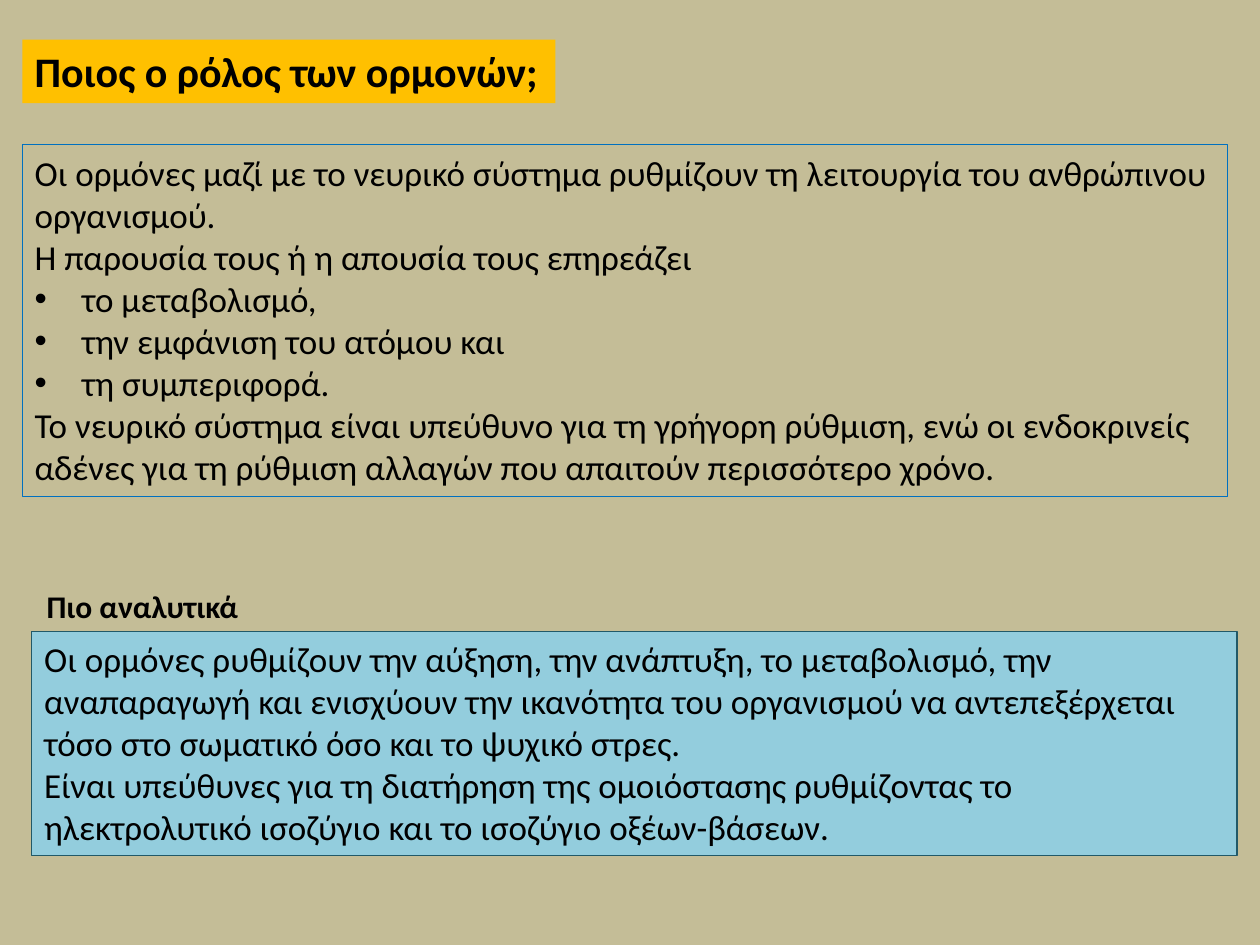
from lxml.etree import SubElement
from pptx import Presentation
from pptx.dml.color import RGBColor
from pptx.enum.shapes import MSO_SHAPE
from pptx.enum.text import MSO_ANCHOR, MSO_AUTO_SIZE, PP_ALIGN
from pptx.oxml.ns import qn
from pptx.util import Cm, Pt

BLACK = RGBColor(0x00, 0x00, 0x00)
SAND = RGBColor(0xC4, 0xBD, 0x97)
GOLD = RGBColor(0xFF, 0xC0, 0x00)
SKY = RGBColor(0x93, 0xCD, 0xDD)
BLUE = RGBColor(0x00, 0x70, 0xC0)
TEAL = RGBColor(0x21, 0x59, 0x68)

BULLET = "•"
ROLE = [
    "Οι ορμόνες μαζί με το νευρικό σύστημα ρυθμίζουν τη λειτουργία του ανθρώπινου οργανισμού.",
    "Η παρουσία τους ή η απουσία τους επηρεάζει",
    BULLET + "το μεταβολισμό,",
    BULLET + "την εμφάνιση του ατόμου και",
    BULLET + "τη συμπεριφορά.",
    "Το νευρικό σύστημα είναι υπεύθυνο για τη γρήγορη ρύθμιση, ενώ οι ενδοκρινείς "
    "αδένες για τη ρύθμιση αλλαγών που απαιτούν περισσότερο χρόνο.",
]
DETAILS = [
    "Οι ορμόνες ρυθμίζουν την αύξηση, την ανάπτυξη, το μεταβολισμό, την αναπαραγωγή "
    "και ενισχύουν την ικανότητα του οργανισμού να αντεπεξέρχεται τόσο στο σωματικό "
    "όσο και το ψυχικό στρες.",
    "Είναι υπεύθυνες για τη διατήρηση της ομοιόστασης ρυθμίζοντας το",
    "ηλεκτρολυτικό ισοζύγιο και το ισοζύγιο οξέων-βάσεων.",
]


def add_bullet(p, indent=Cm(0.95)):
    pPr = p._p.get_or_add_pPr()
    pPr.set("marL", str(indent))
    pPr.set("indent", str(-indent))
    SubElement(pPr, qn("a:buFont"), typeface="Arial")
    SubElement(pPr, qn("a:buChar"), char=BULLET)


def write(tf, lines, size=20, bold=False, wrap=True, font="Calibri", color=BLACK):
    """Fill a text frame; lines that start with the bullet sign become list items."""
    tf.word_wrap = wrap
    tf.auto_size = MSO_AUTO_SIZE.SHAPE_TO_FIT_TEXT
    tf.vertical_anchor = MSO_ANCHOR.TOP
    for i, line in enumerate(lines):
        p = tf.add_paragraph() if i else tf.paragraphs[0]
        p.alignment = PP_ALIGN.LEFT
        if line.startswith(BULLET):
            add_bullet(p)
        r = p.add_run()
        r.text = line.removeprefix(BULLET)
        r.font.name = font
        r.font.size = Pt(size)
        r.font.bold = bold
        r.font.color.rgb = color


class SlideBuilder:
    def __init__(self, prs, background):
        self.s = prs.slides.add_slide(prs.slide_layouts[6])
        self.s.background.fill.solid()
        self.s.background.fill.fore_color.rgb = background

    def panel(self, x, y, w, h, lines, fill=None, line=None, **fmt):
        sp = self.s.shapes.add_shape(MSO_SHAPE.RECTANGLE, Cm(x), Cm(y), Cm(w), Cm(h))
        sp.shadow.inherit = False
        if fill is None:
            sp.fill.background()
        else:
            sp.fill.solid()
            sp.fill.fore_color.rgb = fill
        if line is None:
            sp.line.fill.background()
        else:
            sp.line.color.rgb = line
            sp.line.width = Pt(0.75)
        write(sp.text_frame, lines, **fmt)

    def label(self, x, y, w, h, text, **fmt):
        sp = self.s.shapes.add_textbox(Cm(x), Cm(y), Cm(w), Cm(h))
        write(sp.text_frame, [text], **fmt)


def main():
    prs = Presentation()
    prs.slide_width, prs.slide_height = Cm(25.4), Cm(19.05)
    b = SlideBuilder(prs, SAND)
    b.panel(0.45, 2.92, 24.3, 7.09, ROLE, line=BLUE)
    b.panel(0.64, 12.73, 24.3, 4.52, DETAILS, fill=SKY, line=TEAL)
    b.panel(0.45, 0.8, 10.75, 1.28, ["Ποιος ο ρόλος των ορμονών;"],
            fill=GOLD, size=24, bold=True, wrap=False)
    b.label(0.69, 11.7, 4.42, 1.03, "Πιο αναλυτικά", size=18, bold=True, wrap=False)
    prs.save("out.pptx")


if __name__ == "__main__":
    main()
